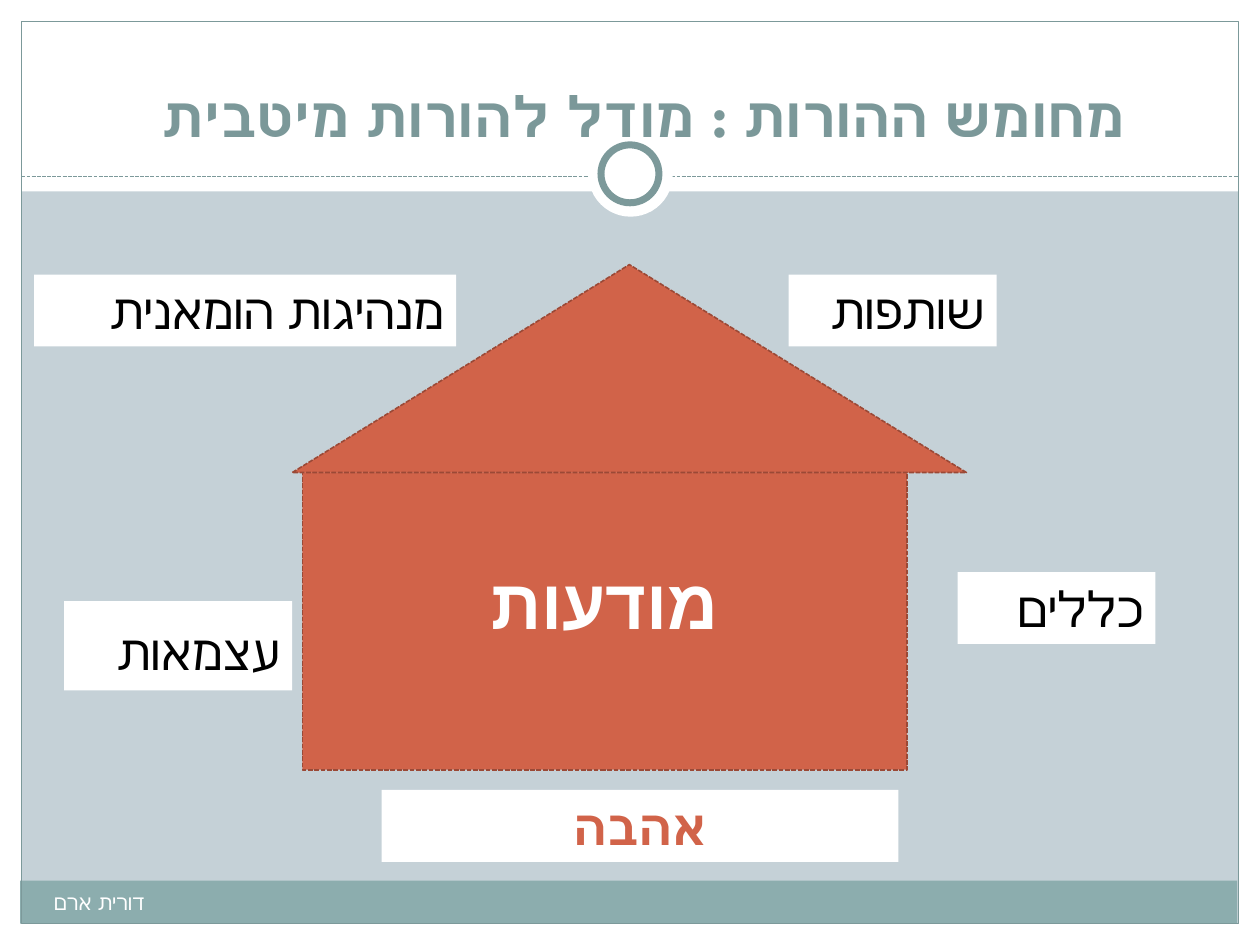
from lxml.etree import SubElement
from pptx import Presentation
from pptx.dml.color import RGBColor
from pptx.enum.dml import MSO_LINE
from pptx.enum.shapes import MSO_CONNECTOR, MSO_SHAPE as Shape
from pptx.enum.text import MSO_ANCHOR as Anchor, PP_ALIGN as Align
from pptx.oxml.ns import qn
from pptx.util import Emu, Pt

PX = 9144
WHITE, BLACK = "FFFFFF", "000000"
TEAL, FRAME, BAND = "7B9899", "7C999A", "8CADAE"
BRICK, BRICK_EDGE, BACKDROP = "D16349", "9B4936", "C5D1D7"


def px(*lengths):
    return [Emu(length * PX) for length in lengths]


def color(value):
    return RGBColor.from_string(value)


class HouseSlide:
    font = "TeX Gyre Schola"
    size = 28

    def __init__(self, presentation):
        self.slide = presentation.slides.add_slide(presentation.slide_layouts[6])
        self.shapes = self.slide.shapes
        self.fill(self.slide.background, BACKDROP)

    def fill(self, item, value):
        item.fill.solid()
        item.fill.fore_color.rgb = color(value)

    def outline(self, item, value, width, dashed=False):
        item.line.color.rgb = color(value)
        item.line.width = Pt(width)
        if dashed:
            item.line.dash_style = MSO_LINE.SQUARE_DOT

    def shape(self, kind, box, fill=None, line=None, width=0.75, dashed=False):
        shape = self.shapes.add_shape(kind, *px(*box))
        shape.shadow.inherit = False
        if fill:
            self.fill(shape, fill)
        else:
            shape.fill.background()
        if line:
            self.outline(shape, line, width, dashed)
        else:
            shape.line.fill.background()

    def divider(self, start, end):
        line = self.shapes.add_connector(MSO_CONNECTOR.STRAIGHT, *px(*start, *end))
        self.outline(line, FRAME, 0.75, dashed=True)
        SubElement(line._element.spPr, qn("a:effectLst"))

    def style(self, run, size, value, bold, font):
        run.font.name = font
        run.font.size = Pt(size)
        run.font.bold = bold
        run.font.color.rgb = color(value)
        SubElement(run.font._element, qn("a:cs"), typeface=font)

    def text(self, box, text, value=BLACK, size=size, bold=False, align=Align.RIGHT,
             anchor=Anchor.TOP, fill=None, font=font, rtl=True):
        shape = self.shapes.add_textbox(*px(*box))
        if fill:
            self.fill(shape, fill)
        frame = shape.text_frame
        frame.word_wrap = True
        frame.vertical_anchor = anchor
        frame.text = text
        paragraph = frame.paragraphs[0]
        paragraph.alignment = align
        if rtl:
            paragraph._p.get_or_add_pPr().set("rtl", "1")
        self.style(paragraph.runs[0], size, value, bold, font)
        return paragraph

    def label(self, box, text, **options):
        return self.text(box, text, fill=WHITE, **options)


def main():
    presentation = Presentation()
    presentation.slide_width, presentation.slide_height = px(1000, 750)
    page = HouseSlide(presentation)

    for margin in ((0, 733, 1000, 17), (0, 0, 1000, 152), (0, 0, 17, 750), (983, 0, 17, 750)):
        page.shape(Shape.RECTANGLE, margin, WHITE)
    page.shape(Shape.RECTANGLE, (16, 699, 966, 34), BAND)
    page.shape(Shape.RECTANGLE, (17, 17, 966, 716), line=FRAME)
    page.divider((17, 140), (983, 140))
    page.shape(Shape.OVAL, (467, 105, 67, 67), WHITE)
    page.shape(Shape.OVAL, (477, 115, 46, 46), WHITE, FRAME, 4)

    page.text((86, 31, 850, 92), "מחומש ההורות : מודל להורות מיטבית", TEAL, 32, True,
              Align.CENTER, Anchor.BOTTOM)
    page.label((303, 627, 410, 57), "אהבה", value=BRICK, bold=True, align=Align.CENTER)
    page.label((760, 454, 157, 57), "כללים")
    independence = page.label((51, 477, 181, 71), "עצמאות")
    spacer = independence.add_run()
    spacer.text = " "
    page.style(spacer, 36, BLACK, False, page.font)

    page.shape(Shape.RECTANGLE, (240, 375, 480, 236), BRICK, BRICK_EDGE, 0.9, True)
    page.shape(Shape.ISOSCELES_TRIANGLE, (232, 210, 535, 165), BRICK, BRICK_EDGE, 0.9, True)

    page.label((626, 218, 165, 57), "שותפות")
    page.label((27, 218, 335, 57), "מנהיגות הומאנית")
    page.text((33, 701, 392, 40), "דורית ארם", WHITE, 12, align=Align.LEFT)
    page.text((372, 439, 216, 108), "מודעות", WHITE, 40, True, Align.CENTER,
              font="Arial", rtl=False)

    presentation.save("out.pptx")


if __name__ == "__main__":
    main()
